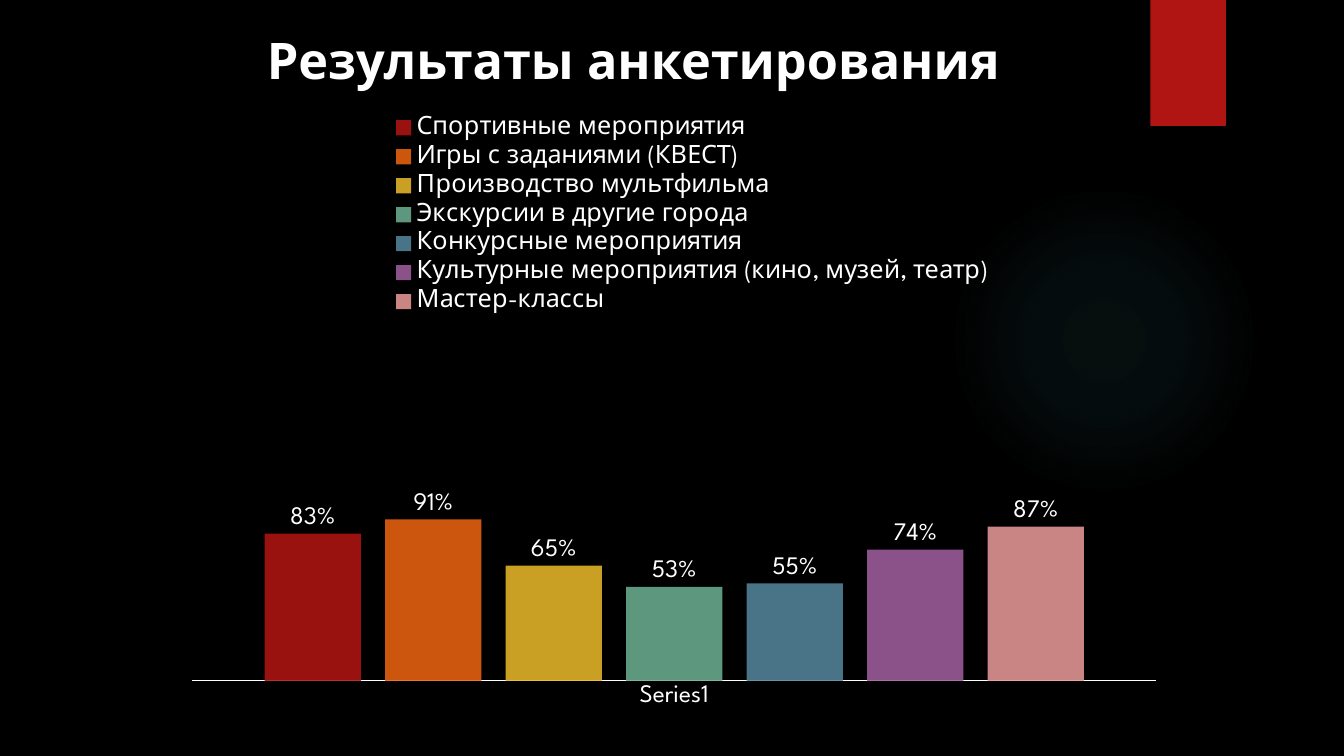
from lxml.etree import SubElement as Sub
from pptx import Presentation
from pptx.chart.data import CategoryChartData as Data
from pptx.dml.color import RGBColor
from pptx.enum.chart import XL_CHART_TYPE as Kind, XL_LABEL_POSITION as Spot
from pptx.enum.chart import XL_LEGEND_POSITION as Side, XL_TICK_MARK as Tick
from pptx.enum.shapes import MSO_SHAPE as Form
from pptx.enum.text import MSO_ANCHOR as Anchor, MSO_AUTO_SIZE as Fit, PP_ALIGN as Align
from pptx.oxml import parse_xml
from pptx.oxml.ns import nsdecls, qn
from pptx.util import Pt

FACE = "League Spartan"
WHITE = "FFFFFF"


def paint(color, code):
    color.rgb = RGBColor.from_string(code)


def place(kind, x, y, w, h):
    tags = [("xMode", "edge"), ("yMode", "edge"), ("x", x), ("y", y), ("w", w), ("h", h)]
    if kind:
        tags.insert(0, ("layoutTarget", kind))
    layout = parse_xml(f"<c:layout {nsdecls('c')}/>")
    manual = Sub(layout, qn("c:manualLayout"))
    for tag, val in tags:
        Sub(manual, qn(f"c:{tag}")).set("val", str(val))
    return layout


deck = Presentation()
deck.slide_width, deck.slide_height = Pt(960), Pt(540)
slide = deck.slides.add_slide(deck.slide_layouts[5])
slide.background.fill.solid()
paint(slide.background.fill.fore_color, "000000")
shapes = slide.shapes

glow = shapes.add_shape(Form.OVAL, Pt(677.5), Pt(131.8), Pt(221.8), Pt(221.8))
glow.shadow.inherit = False
glow.line.fill.background()
stops = "".join(
    f'<a:gs pos="{pos}000"><a:srgbClr val="50B9C1"><a:alpha val="{alpha}000"/></a:srgbClr></a:gs>'
    for pos, alpha in [(0, 7), (36, 6), (69, 0)]
)
fade = parse_xml(
    f'<a:gradFill {nsdecls("a")} rotWithShape="1"><a:gsLst>{stops}</a:gsLst>'
    '<a:path path="circle"><a:fillToRect l="50000" t="50000" r="50000" b="50000"/></a:path></a:gradFill>'
)
glow.element.spPr.find(qn("a:prstGeom")).addnext(fade)

flag = shapes.add_shape(Form.RECTANGLE, Pt(821.7), 0, Pt(54), Pt(90))
flag.shadow.inherit = False
flag.fill.solid()
paint(flag.fill.fore_color, "B01513")
flag.line.fill.background()
shade = Sub(flag.element.spPr.find(qn("a:effectLst")), qn("a:outerShdw"))
for key, val in [("blurRad", Pt(3)), ("dist", Pt(2)), ("dir", 90 * 60000)]:
    shade.set(key, str(int(val)))
tint = Sub(shade, qn("a:srgbClr"), val="000000")
Sub(tint, qn("a:alpha"), val="45000")

bars = [
    ("Спортивные мероприятия", 0.83, "B01513"),
    ("Игры с заданиями (КВЕСТ)", 0.91, "EA6312"),
    ("Производство мультфильма", 0.65, "E6B729"),
    ("Экскурсии в другие города", 0.53, "6AAC90"),
    ("Конкурсные мероприятия", 0.55, "54849A"),
    ("Культурные мероприятия (кино, музей, театр)", 0.74, "9E5E9B"),
    ("Мастер-классы", 0.87, "E49896"),
]
data = Data(number_format="0%")
data.categories = ["Series1"]
for name, val, code in bars:
    data.add_series(name, [val])
frame = shapes.add_chart(
    Kind.COLUMN_CLUSTERED, Pt(127.4), Pt(74.2), Pt(712.8), Pt(465.8), data
)
chart = frame.chart
chart.has_title = False
chart.font.name, chart.font.size = FACE, Pt(18)
paint(chart.font.color, WHITE)

plot = chart.plots[0]
plot.vary_by_categories = False
plot.gap_width, plot.overlap = 150, -25
for row, (name, val, code) in zip(plot.series, bars):
    row.format.fill.solid()
    paint(row.format.fill.fore_color, code)
    for clr in row.format.fill._xPr.iter(qn("a:srgbClr")):
        Sub(clr, qn("a:alpha"), val="88000")
    tags = row.data_labels
    tags.show_value = True
    tags.number_format, tags.number_format_is_linked = "0%", False
    tags.position = Spot.OUTSIDE_END

axis = chart.category_axis
axis.major_tick_mark = axis.minor_tick_mark = Tick.NONE
axis.format.line.width = Pt(0.75)
paint(axis.format.line.color, WHITE)
scale = chart.value_axis
scale.minimum_scale, scale.maximum_scale = 0, 1
scale.has_major_gridlines = False
scale.visible = False

chart.has_legend = True
chart.legend.position = Side.TOP
chart.legend.include_in_layout = False
space = chart._chartSpace
for old in space.xpath(".//c:plotArea/c:layout | .//c:legend/c:layout"):
    old.getparent().remove(old)
space.xpath(".//c:plotArea")[0].insert(0, place("inner", 0.014, 0.613, 0.966, 0.272))
key = space.xpath(".//c:legend")[0]
spot = place("", 0.2, 0.01, 0.63, 0.32)
key.find(qn("c:overlay")).addprevious(spot)
clear = parse_xml(f"<c:spPr {nsdecls('c', 'a')}><a:noFill/><a:ln><a:noFill/></a:ln></c:spPr>")
space.find(qn("c:chart")).addnext(clear)

title = shapes.title
title.left, title.top, title.width, title.height = Pt(82), Pt(17.3), Pt(741), Pt(85)
text = title.text_frame
text.text = "Результаты анкетирования"
text.auto_size = Fit.NONE
text.word_wrap = True
text.vertical_anchor = Anchor.TOP
line = text.paragraphs[0]
line.alignment = Align.CENTER
font = line.runs[0].font
font.name, font.size, font.bold = FACE, Pt(36), True
paint(font.color, WHITE)

deck.save("out.pptx")
